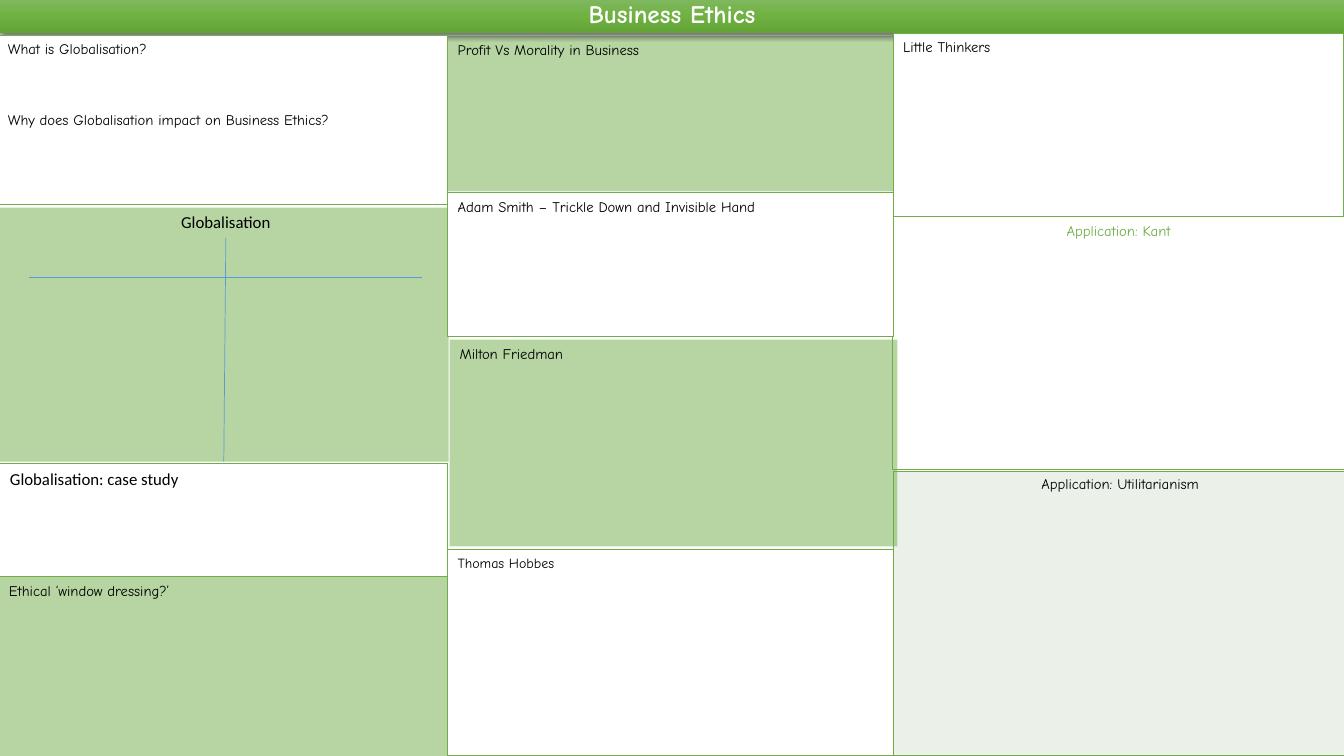
import pptx
import pptx.util
import pptx.dml.color
import pptx.enum.shapes
import pptx.enum.text
import pptx.oxml
import pptx.oxml.ns

Inches = pptx.util.Inches
Pt = pptx.util.Pt
RGBColor = pptx.dml.color.RGBColor
Align = pptx.enum.text.PP_ALIGN
Anchor = pptx.enum.text.MSO_ANCHOR

GREEN = RGBColor(0x70, 0xAD, 0x47)
PALE = RGBColor(0xEB, 0xF1, 0xE9)
BLUE = RGBColor(0x5B, 0x9B, 0xD5)
WHITE = RGBColor(0xFF, 0xFF, 0xFF)
BLACK = RGBColor(0, 0, 0)
TOP, MID, LOW = (RGBColor(0x81, 0xB8, 0x61), RGBColor(0x6F, 0xB2, 0x42),
                 RGBColor(0x62, 0xA3, 0x36))
HAND, PLAIN = "Comic Neue", "Calibri"
SPACE = 'xmlns:a="http://schemas.openxmlformats.org/drawingml/2006/main"'


def style(frame, size=10.5, face=HAND, color=BLACK, align=Align.LEFT, bold=False):
    """Format every paragraph and run of a text frame."""
    for para in frame.paragraphs:
        para.alignment = align
        for run in para.runs:
            font = run.font
            font.size, font.name, font.bold = Pt(size), face, bold
            font.color.rgb = color


def add_panel(slide, box, text="", fill=WHITE, edge=1, alpha=100, **look):
    """Add a box of notes; fill None leaves it clear, edge 0 drops its border."""
    shape = slide.shapes.add_shape(pptx.enum.shapes.MSO_SHAPE.RECTANGLE,
                                   *map(Inches, box))
    shape.shadow.inherit = False
    if fill is None:
        shape.fill.background()
    else:
        shape.fill.solid()
        shape.fill.fore_color.rgb = fill
    if alpha < 100:
        color = shape.element.spPr.find(".//" + pptx.oxml.ns.qn("a:srgbClr"))
        color.append(pptx.oxml.parse_xml(f'<a:alpha {SPACE} val="{alpha * 1000}"/>'))
    if edge:
        shape.line.color.rgb = GREEN
        shape.line.width = Pt(edge)
    else:
        shape.line.fill.background()
    frame = shape.text_frame
    frame.word_wrap = True
    frame.vertical_anchor = Anchor.TOP
    frame.text = text
    style(frame, **look)
    return shape


def add_tint(slide, box, text=""):
    return add_panel(slide, box, text, fill=GREEN, edge=0, alpha=50)


def add_label(slide, box, text, align=Align.LEFT):
    frame = slide.shapes.add_textbox(*map(Inches, box)).text_frame
    frame.word_wrap = True
    frame.text = text
    style(frame, size=12, face=PLAIN, align=align)


def add_rule(slide, *ends):
    rule = slide.shapes.add_connector(pptx.enum.shapes.MSO_CONNECTOR.STRAIGHT,
                                      *map(Inches, ends))
    rule.line.color.rgb = BLUE
    rule.line.width = Pt(0.5)
    rule.element.spPr.append(pptx.oxml.parse_xml(f"<a:effectLst {SPACE}/>"))


def add_banner(slide, box):
    title = slide.shapes.title
    title.left, title.top, title.width, title.height = map(Inches, box)
    frame = title.text_frame
    frame.text = "Business Ethics"
    frame.vertical_anchor = Anchor.MIDDLE
    frame.auto_size = pptx.enum.text.MSO_AUTO_SIZE.NONE
    frame.paragraphs[0].line_spacing = 0.9
    style(frame, size=18, color=WHITE, align=Align.CENTER, bold=True)
    stops = "".join(f'<a:gs pos="{pos}"><a:srgbClr val="{color}"/></a:gs>'
                    for pos, color in ((0, TOP), (50000, MID), (100000, LOW)))
    props = title.element.spPr
    props.append(pptx.oxml.parse_xml(
        f'<a:prstGeom {SPACE} prst="rect"><a:avLst/></a:prstGeom>'))
    props.append(pptx.oxml.parse_xml(
        f'<a:gradFill {SPACE}><a:gsLst>{stops}</a:gsLst>'
        '<a:lin ang="5400000" scaled="0"/></a:gradFill>'))
    props.append(pptx.oxml.parse_xml(
        f'<a:effectLst {SPACE}><a:outerShdw blurRad="{Pt(4.5)}" dist="{Pt(1.5)}" '
        f'dir="5400000" rotWithShape="0"><a:srgbClr val="{BLACK}">'
        '<a:alpha val="63000"/></a:srgbClr></a:outerShdw></a:effectLst>'))
    # Bring the banner above the panels already drawn
    title.element.getparent().append(title.element)


def add_grid(slide, box, text):
    """Add the one-cell table with green borders."""
    table = slide.shapes.add_table(1, 1, *map(Inches, box)).table
    table.first_row = table.horz_banding = False
    cell = table.cell(0, 0)
    cell.text = text
    style(cell.text_frame, align=Align.CENTER)
    props = cell._tc.get_or_add_tcPr()
    for side in "LRTB":
        props.append(pptx.oxml.parse_xml(
            f'<a:ln{side} {SPACE} w="{Pt(1)}"><a:solidFill>'
            f'<a:srgbClr val="{GREEN}"/></a:solidFill></a:ln{side}>'))
    cell.fill.solid()
    cell.fill.fore_color.rgb = PALE


def add_chart(slide, left, top, width, height):
    """Add the tinted T-chart with its heading and two rules."""
    add_tint(slide, (left, top, width, height))
    add_label(slide, (left + 1.25, top - 0.01, 2, 0.3), "Globalisation", Align.CENTER)
    add_rule(slide, left + 2.25, top + 0.3, left + 2.23, top + height)
    add_rule(slide, left + 0.3, top + 0.69, left + 4.2, top + 0.69)


def add_left(slide):
    intro = add_panel(slide, (-0.02, 0.35, 4.46, 1.68),
                      "What is Globalisation?\n"
                      "Why does Globalisation impact on Business Ethics?")
    intro.text_frame.paragraphs[1].space_before = Pt(37.5)
    add_chart(slide, -0.01, 2.06, 4.46, 2.52)
    add_tint(slide, (-0.01, 5.72, 4.45, 1.78), "Ethical ‘window dressing?’")
    add_panel(slide, (0, 4.6, 4.44, 1.12), fill=None, edge=0.75)
    add_label(slide, (0, 4.6, 2.22, 0.3), "Globalisation: case study")


def add_right(slide):
    add_panel(slide, (8.86, 0.33, 4.47, 1.82), "Little Thinkers")
    add_grid(slide, (8.86, 4.68, 4.5, 2.82), "Application: Utilitarianism")


def add_mid(slide):
    add_tint(slide, (4.46, 3.37, 4.44, 2.05), "Milton Friedman")
    add_panel(slide, (4.44, 1.91, 4.42, 1.43),
              "Adam Smith – Trickle Down and Invisible Hand")


def add_back(slide):
    """Add the panels that lie behind the banner."""
    add_panel(slide, (4.44, 5.45, 4.42, 2.05), "Thomas Hobbes", size=10)
    add_tint(slide, (4.44, 0.36, 4.42, 1.54), "Profit Vs Morality in Business")
    add_panel(slide, (8.85, 2.15, 4.49, 2.51), "Application: Kant", fill=None,
              edge=0.75, color=GREEN, align=Align.CENTER)


def main():
    deck = pptx.Presentation()
    deck.slide_width, deck.slide_height = Inches(13.33), Inches(7.5)
    slide = deck.slides.add_slide(deck.slide_layouts[5])
    add_back(slide)
    add_banner(slide, (0, -0.02, 13.33, 0.35))
    add_left(slide)
    add_right(slide)
    add_mid(slide)
    deck.save("out.pptx")


if __name__ == "__main__":
    main()
